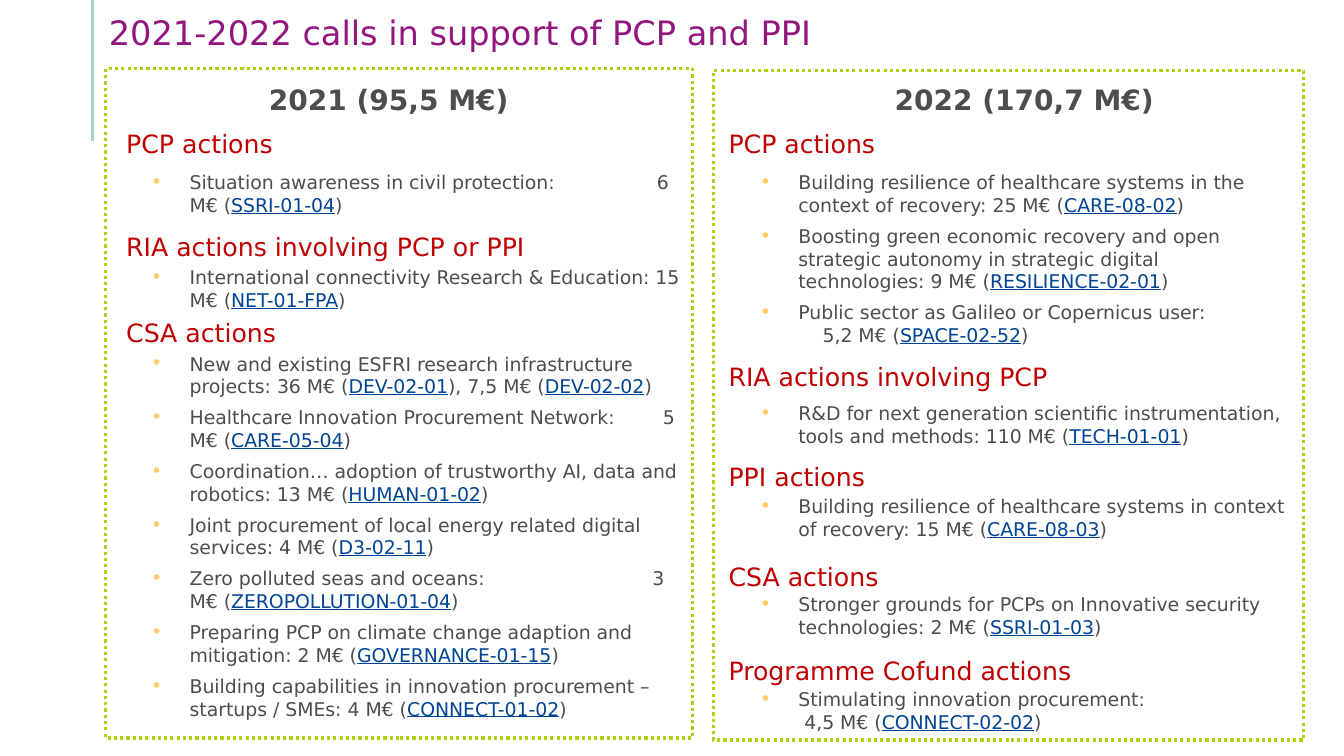
from dataclasses import dataclass

from lxml import etree
from pptx import Presentation
from pptx.dml.color import RGBColor
from pptx.enum.dml import MSO_LINE
from pptx.enum.shapes import MSO_CONNECTOR, MSO_SHAPE
from pptx.enum.text import MSO_ANCHOR, MSO_AUTO_SIZE, PP_ALIGN
from pptx.oxml.ns import qn
from pptx.util import Cm, Pt

STRAIGHT = MSO_CONNECTOR.STRAIGHT
RECTANGLE = MSO_SHAPE.RECTANGLE
DOTTED = MSO_LINE.ROUND_DOT
TOP, MIDDLE = MSO_ANCHOR.TOP, MSO_ANCHOR.MIDDLE
LEFT, CENTER = PP_ALIGN.LEFT, PP_ALIGN.CENTER
NO_AUTOFIT = MSO_AUTO_SIZE.NONE

PURPLE = RGBColor(0x93, 0x16, 0x80)
TEAL = RGBColor(0xA2, 0xD5, 0xD0)
LIME = RGBColor(0xB0, 0xD1, 0x0E)
GREY = RGBColor(0x4D, 0x4D, 0x4D)
RED = RGBColor(0xC0, 0x00, 0x00)
BLUE = RGBColor(0x00, 0x44, 0x94)
AMBER = RGBColor(0xFF, 0xCC, 0x66)
FONT = "DejaVu Sans"
BULLET_SIZE = 13.5


@dataclass
class Panel:
    """Box, text inset and paragraph indents of one year, in centimetres."""
    box: tuple
    inset: tuple
    text_width: float
    year_indent: float
    heading_indent: float
    bullet_indent: float


PANEL_2021 = Panel((2.67, 1.73, 14.78, 16.87), (-0.28, 0.35), 14.82, 0, 0.79, 2.39)
PANEL_2022 = Panel((17.98, 1.78, 14.88, 16.87), (0, 0.3), 14.41, 1.26, 0.38, 2.14)

# Sections: heading, points above it, points below it, bullets.
# Bullets: text with codes between bars, then an optional lead and gap in points.
CALLS_2021 = [
    ("PCP actions", 9, 8.5, [
        ("6 M€ (|SSRI-01-04|)", "Situation awareness in civil protection:", 68.5)]),
    ("RIA actions involving PCP or PPI", 10.5, 3.5, [
        ("International connectivity Research & Education: 15 M€ (|NET-01-FPA|)",)]),
    ("CSA actions", 4.5, 3, [
        ("New and existing ESFRI research infrastructure projects: "
         "36 M€ (|DEV-02-01|), 7,5 M€ (|DEV-02-02|)",),
        ("5 M€ (|CARE-05-04|)", "Healthcare Innovation Procurement Network:", 30),
        ("Coordination… adoption of trustworthy AI, data and robotics: "
         "13 M€ (|HUMAN-01-02|)",),
        ("Joint procurement of local energy related digital services: "
         "4 M€ (|D3-02-11|)",),
        ("3 M€ (|ZEROPOLLUTION-01-04|)", "Zero polluted seas and oceans:", 115.5),
        ("Preparing PCP on climate change adaption and mitigation: "
         "2 M€ (|GOVERNANCE-01-15|)",),
        ("Building capabilities in innovation procurement – startups / SMEs: "
         "4 M€ (|CONNECT-01-02|)",)]),
]
CALLS_2022 = [
    ("PCP actions", 9, 8.5, [
        ("Building resilience of healthcare systems in the context of recovery: "
         "25 M€ (|CARE-08-02|)",),
        ("Boosting green economic recovery and open strategic autonomy in "
         "strategic digital technologies: 9 M€ (|RESILIENCE-02-01|)",),
        ("5,2 M€ (|SPACE-02-52|)",
         "Public sector as Galileo or Copernicus user:\v", 13)]),
    ("RIA actions involving PCP", 11, 7, [
        ("R&D for next generation scientific instrumentation, tools and methods: "
         "110 M€ (|TECH-01-01|)",)]),
    ("PPI actions", 10, 2.5, [
        ("Building resilience of healthcare systems in context of recovery: "
         "15 M€ (|CARE-08-03|)",)]),
    ("CSA actions", 15, 1, [
        ("Stronger grounds for PCPs on Innovative security technologies: "
         "2 M€ (|SSRI-01-03|)",)]),
    ("Programme Cofund actions", 12, 2, [
        ("4,5 M€ (|CONNECT-02-02|)", "Stimulating innovation procurement:\v", 0)]),
]


def place(sp, left, top, width, height):
    """Move a shape to a box given in centimetres."""
    sp.left, sp.top, sp.width, sp.height = map(Cm, (left, top, width, height))


def style_run(r, size, color, bold=False):
    """Set the font of one run."""
    r.font.name, r.font.size, r.font.bold = FONT, Pt(size), bold
    r.font.color.rgb = color


def style_paragraph(p, indent, before, bullet=False):
    """Set indent, spacing and bullet of one paragraph."""
    p.space_before, p.space_after, p.line_spacing = Pt(before), Pt(0), 1.0
    pPr = p._p.get_or_add_pPr()
    pPr.set("marL", str(Cm(indent)))
    pPr.set("indent", str(-Cm(0.97) if bullet else 0))
    if bullet:
        color = etree.SubElement(pPr, qn("a:buClr"))
        etree.SubElement(color, qn("a:srgbClr"), val=str(AMBER))
        etree.SubElement(pPr, qn("a:buFont"), typeface=FONT)
        etree.SubElement(pPr, qn("a:buChar"), char="•")
    else:
        etree.SubElement(pPr, qn("a:buNone"))


def add_line(p, text, size, color, indent, before, bold=False):
    """Write a one-run paragraph without bullet."""
    p.text = text
    style_paragraph(p, indent, before)
    style_run(p.runs[0], size, color, bold)


def add_bullet(p, indent, before, text, lead="", gap=0):
    """Write a bullet with underlined call codes and an optional spaced lead."""
    p.text = lead
    style_paragraph(p, indent, before, bullet=True)
    for br in p._p.findall(qn("a:br")):
        etree.SubElement(br, qn("a:rPr"), sz=str(int(BULLET_SIZE * 100)))
    if lead:
        style_run(p.runs[0], BULLET_SIZE, GREY)
        r = p.add_run()
        r.text = " "
        style_run(r, BULLET_SIZE, GREY)
        r.font._element.set("spc", str(int(gap * 100)))
    for i, part in enumerate(text.split("|")):
        is_code = i % 2 == 1
        r = p.add_run()
        r.text = part
        style_run(r, BULLET_SIZE, BLUE if is_code else GREY)
        r.font.underline = is_code


def add_title(s, left, top, width, height):
    """Place the slide title and the vertical rule to its left."""
    sp = s.shapes.title
    place(sp, left, top, width, height)
    tf = sp.text_frame
    tf.text = "2021-2022 calls in support of PCP and PPI"
    tf.auto_size, tf.vertical_anchor = NO_AUTOFIT, MIDDLE
    p = tf.paragraphs[0]
    p.alignment = LEFT
    style_run(p.runs[0], 24, PURPLE)
    x = Cm(left - 0.15)
    rule = s.shapes.add_connector(STRAIGHT, x, Cm(top), x, Cm(top + 3.56))
    rule.line.color.rgb, rule.line.width = TEAL, Pt(2.25)
    etree.SubElement(rule._element.spPr, qn("a:effectLst"))


def add_panel(s, body, panel, year, sections):
    """Draw the dotted box of one year and fill its list of calls."""
    left, top, width, height = panel.box
    frame = s.shapes.add_shape(RECTANGLE, *map(Cm, panel.box))
    frame.shadow.inherit = False
    frame.fill.background()
    frame.line.color.rgb, frame.line.width = LIME, Pt(2.25)
    frame.line.dash_style = DOTTED

    dx, dy = panel.inset
    place(body, left + dx, top + dy, panel.text_width, height - dy)
    tf = body.text_frame
    tf.word_wrap, tf.auto_size, tf.vertical_anchor = True, NO_AUTOFIT, TOP
    tf.margin_left = tf.margin_right = tf.margin_top = tf.margin_bottom = 0
    p = tf.paragraphs[0]
    add_line(p, year, 20, GREY, panel.year_indent, 0, bold=True)
    p.alignment = CENTER
    for heading, above, below, bullets in sections:
        add_line(tf.add_paragraph(), heading, 18, RED, panel.heading_indent, above)
        for i, bullet in enumerate(bullets):
            add_bullet(tf.add_paragraph(), panel.bullet_indent, 6 if i else below, *bullet)


def main():
    """Build the slide and save it."""
    prs = Presentation()
    prs.slide_width, prs.slide_height = Cm(33.87), Cm(19.05)
    s = prs.slides.add_slide(prs.slide_layouts[3])
    add_title(s, 2.49, 0, 25.4, 1.6)
    add_panel(s, s.placeholders[1], PANEL_2021, "2021 (95,5 M€)", CALLS_2021)
    add_panel(s, s.placeholders[2], PANEL_2022, "2022 (170,7 M€)", CALLS_2022)
    prs.save("out.pptx")


if __name__ == "__main__":
    main()
